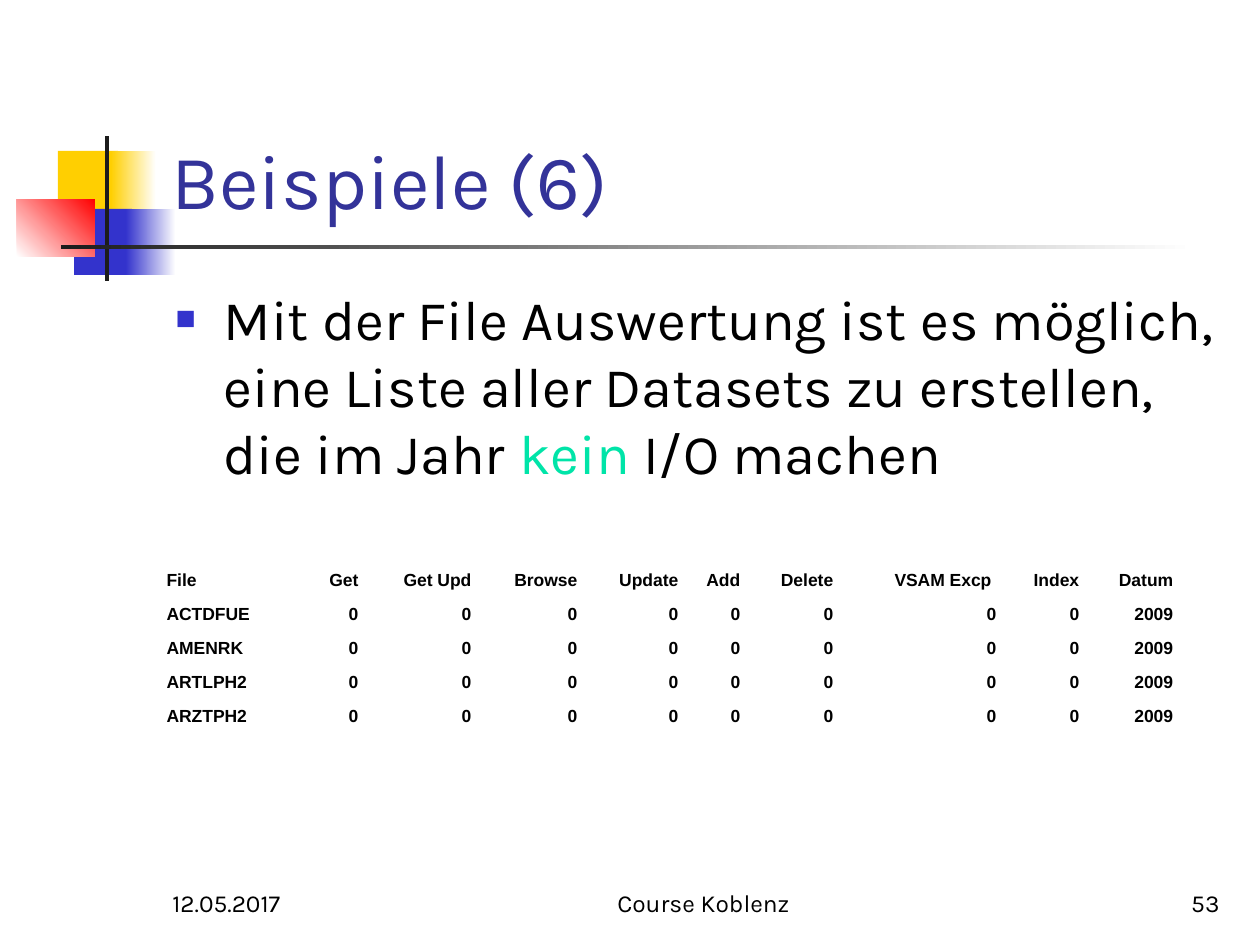
"""Build the slide "Beispiele (6)" with its list of datasets without I/O."""
import lxml.etree
import pptx
import pptx.dml.color
import pptx.enum.shapes
import pptx.enum.text
import pptx.oxml.ns
import pptx.util

RGB = pptx.dml.color.RGBColor
BLACK = RGB(0x00, 0x00, 0x00)
WHITE = RGB(0xFF, 0xFF, 0xFF)
CHARCOAL = RGB(0x1C, 0x1C, 0x1C)
YELLOW = RGB(0xFF, 0xCF, 0x01)
BLUE = RGB(0x33, 0x33, 0xCC)
RED = RGB(0xFF, 0x00, 0x00)
NAVY = RGB(0x33, 0x33, 0x99)
GREEN = RGB(0x00, 0xE4, 0xA8)

ALIGN = pptx.enum.text.PP_ALIGN
ANCHOR = pptx.enum.text.MSO_ANCHOR


class Deck:
    SCALE = 914400 / 126
    FONT = "Karla"
    TABLE_FONT = "Arial"

    def __init__(self, width, height):
        self.prs = pptx.Presentation()
        self.prs.slide_width = self.px(width)
        self.prs.slide_height = self.px(height)
        self.slide = self.prs.slides.add_slide(self.prs.slide_layouts[1])

    def px(self, length):
        return pptx.util.Emu(round(length * self.SCALE))

    def box(self, *lengths):
        return [self.px(length) for length in lengths]

    def run(self, paragraph, text, size, color=BLACK, font=FONT, bold=False):
        run = paragraph.add_run()
        run.text = text
        run.font.size = pptx.util.Pt(size)
        run.font.name = font
        run.font.bold = bold
        run.font.color.rgb = color

    def bar(self, bounds, start, end=None, angle=0):
        bar = self.slide.shapes.add_shape(
            pptx.enum.shapes.MSO_SHAPE.RECTANGLE, *self.box(*bounds))
        bar.shadow.inherit = False
        bar.line.fill.background()
        if end is None:
            bar.fill.solid()
            bar.fill.fore_color.rgb = start
            return
        bar.fill.gradient()
        bar.fill.gradient_angle = angle
        for stop, color, position in zip(bar.fill.gradient_stops, (start, end), (0, 1)):
            stop.color.rgb = color
            stop.position = position

    def placeholder(self, index, bounds, anchor):
        holder = self.slide.placeholders[index]
        holder.left, holder.top, holder.width, holder.height = self.box(*bounds)
        self.slide.shapes._spTree.append(holder._element)
        frame = holder.text_frame
        frame.auto_size = pptx.enum.text.MSO_AUTO_SIZE.NONE
        frame.vertical_anchor = anchor
        frame.paragraphs[0].alignment = ALIGN.LEFT
        return frame.paragraphs[0]

    def title(self, bounds, text):
        self.run(self.placeholder(0, bounds, ANCHOR.BOTTOM), text, 44, NAVY)

    def bullet(self, bounds, pieces):
        paragraph = self.placeholder(1, bounds, ANCHOR.TOP)
        properties = paragraph._p.get_or_add_pPr()
        indent = self.px(48)
        properties.set("marL", str(indent))
        properties.set("indent", str(-indent))
        qn = pptx.oxml.ns.qn
        color = lxml.etree.SubElement(properties, qn("a:buClr"))
        lxml.etree.SubElement(color, qn("a:srgbClr"), val=str(BLUE))
        lxml.etree.SubElement(properties, qn("a:buSzPct"), val="60000")
        lxml.etree.SubElement(properties, qn("a:buFont"), typeface=self.TABLE_FONT)
        lxml.etree.SubElement(properties, qn("a:buChar"), char="■")
        for text, text_color in pieces:
            self.run(paragraph, text, 32, text_color)

    def footer(self, bounds, text, alignment):
        frame = self.slide.shapes.add_textbox(*self.box(*bounds)).text_frame
        frame.word_wrap = True
        frame.vertical_anchor = ANCHOR.BOTTOM
        frame.paragraphs[0].alignment = alignment
        self.run(frame.paragraphs[0], text, 14)

    def table(self, left, top, widths, heights, rows):
        table = self.slide.shapes.add_table(
            len(rows), len(widths),
            *self.box(left, top, sum(widths), sum(heights))).table
        table.first_row = table.horz_banding = False
        for column, width in zip(table.columns, widths):
            column.width = self.px(width)
        for row, height, values in zip(table.rows, heights, rows):
            row.height = self.px(height)
            for number, (cell, value) in enumerate(zip(row.cells, values)):
                cell.fill.background()
                cell.vertical_anchor = ANCHOR.BOTTOM
                paragraph = cell.text_frame.paragraphs[0]
                paragraph.alignment = ALIGN.RIGHT if number else ALIGN.LEFT
                self.run(paragraph, value, 10, font=self.TABLE_FONT, bold=True)


def main():
    deck = Deck(1260, 945)

    deck.bar((58, 151, 60, 66), YELLOW)
    deck.bar((111, 151, 45, 66), YELLOW, WHITE)
    deck.bar((74, 209, 58, 66), BLUE)
    deck.bar((126, 209, 50, 66), BLUE, WHITE)
    deck.bar((17, 199, 78, 58), WHITE, RED, angle=45)
    deck.bar((105, 136, 4, 145), CHARCOAL)
    deck.bar((61, 245, 1134, 4), CHARCOAL, WHITE)

    deck.footer((160, 861, 262, 63), "12.05.2017", ALIGN.LEFT)
    deck.footer((504, 861, 399, 63), "Course Koblenz", ALIGN.CENTER)
    deck.footer((970, 861, 262, 63), "53", ALIGN.RIGHT)

    deck.title((159, 29, 1074, 202), "Beispiele (6)")
    deck.bullet((163, 278, 1071, 567), [
        ("Mit der File Auswertung ist es möglich, eine Liste aller Datasets "
         "zu erstellen, die im Jahr ", BLACK),
        ("kein", GREEN),
        (" I/O machen", BLACK),
    ])

    header = ["File", "Get", "Get Upd", "Browse", "Update", "Add", "Delete",
              "VSAM Excp ", "Index", "Datum"]
    files = ["ACTDFUE", "AMENRK", "ARTLPH2", "ARZTPH2"]
    unused = [[file] + ["0"] * 8 + ["2009"] for file in files]
    widths = [160, 57, 113, 106, 101, 62, 93, 163, 83, 94]
    deck.table(154, 522, widths, [75] + [34] * len(files), [header] + unused)

    deck.prs.save("out.pptx")


if __name__ == "__main__":
    main()
